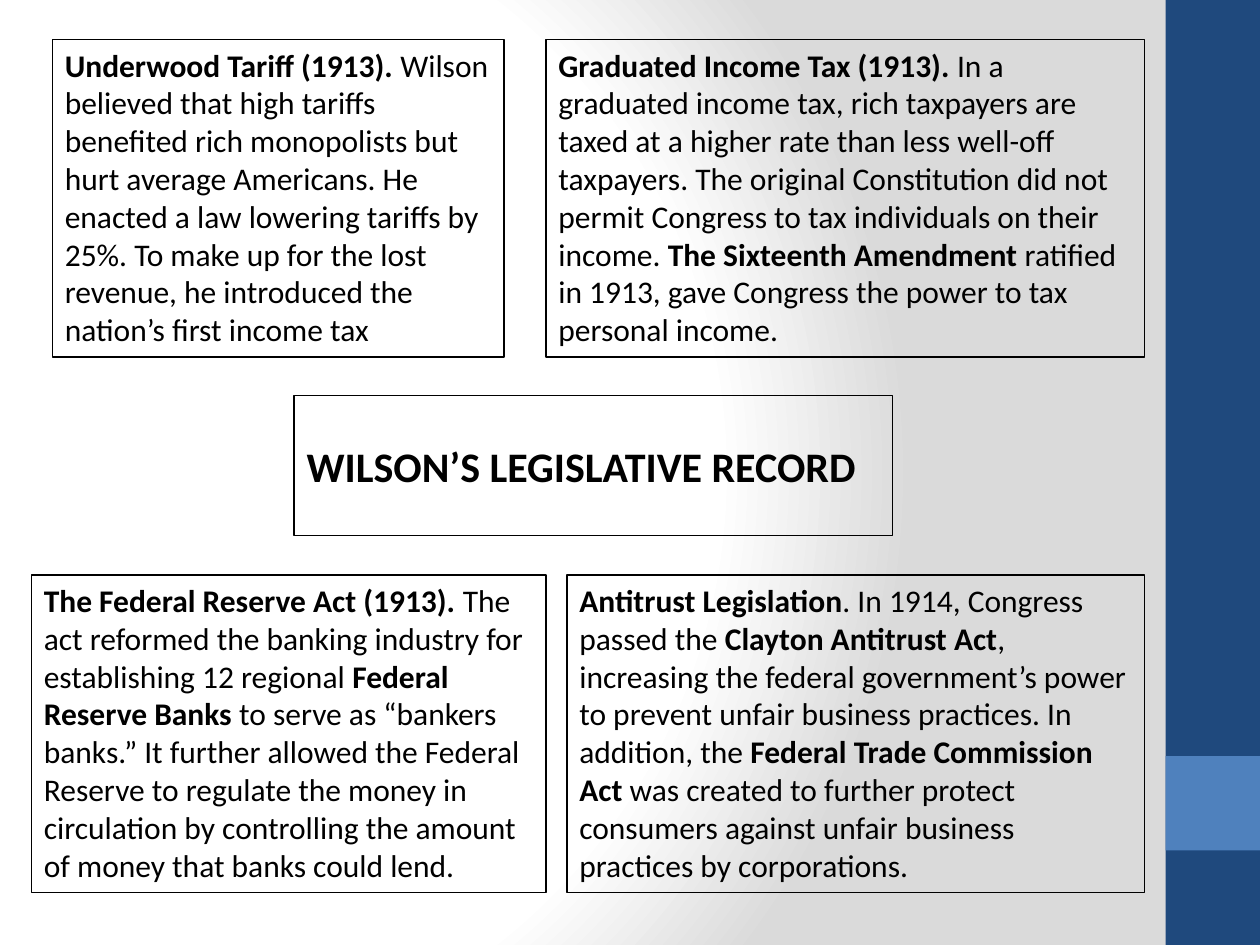
from dataclasses import dataclass

import pptx
import pptx.dml.color
import pptx.enum.shapes
import pptx.enum.text
import pptx.oxml
import pptx.oxml.ns
import pptx.util

Pt = pptx.util.Pt


@dataclass(frozen=True)
class Theme:
    font: str = "Calibri"
    body_size: float = 18
    title_size: float = 24
    outline_width: float = 0.75
    ink: str = "000000"
    band: str = "1F497D"
    accent: str = "4F81BD"
    background_stops: tuple[tuple[int, str], ...] = ((0, "FFFFFF"), (75, "FFFFFF"), (100, "DADADA"))


@dataclass(frozen=True)
class Box:
    left: float
    top: float
    width: float
    height: float


@dataclass(frozen=True)
class Law:
    box: Box
    runs: tuple[str, ...]  # bold and regular text alternate, bold first


THEME = Theme()
SLIDE_WIDTH, SLIDE_HEIGHT = 720, 540
BAND_WIDTH = 54
TOP_ROW, BOTTOM_ROW, LAW_HEIGHT = 22.5, 328.5, 181.5
TITLE = "WILSON’S LEGISLATIVE RECORD"
TITLE_BOX = Box(168, 226, 342, 80)

LAWS = (
    Law(Box(30, TOP_ROW, 258, LAW_HEIGHT), (
        "Underwood Tariff (1913). ",
        "Wilson believed that high tariffs benefited rich monopolists but hurt average "
        "Americans. He enacted a law lowering tariffs by 25%. To make up for the lost "
        "revenue, he introduced the nation’s first income tax",
    )),
    Law(Box(312, TOP_ROW, 342, LAW_HEIGHT), (
        "Graduated Income Tax (1913). ",
        "In a graduated income tax, rich taxpayers are taxed at a higher rate than less "
        "well-off taxpayers. The original Constitution did not permit Congress to tax "
        "individuals on their income. ",
        "The Sixteenth Amendment ",
        "ratified in 1913, gave Congress the power to tax personal income.",
    )),
    Law(Box(18, BOTTOM_ROW, 294, LAW_HEIGHT), (
        "The Federal Reserve Act (1913). ",
        "The act reformed the banking industry for establishing 12 regional ",
        "Federal Reserve Banks",
        " to serve as “bankers banks.” It further allowed the Federal Reserve to regulate "
        "the money in circulation by controlling the amount of money that banks could lend.",
    )),
    Law(Box(324, BOTTOM_ROW, 330, LAW_HEIGHT), (
        "Antitrust Legislation",
        ". In 1914, Congress passed the ",
        "Clayton Antitrust Act",
        ", increasing the federal government’s power to prevent unfair business practices. "
        "In addition, the ",
        "Federal Trade Commission Act",
        " was created to further protect consumers against unfair business practices by "
        "corporations.",
    )),
)


def rgb(color: str) -> pptx.dml.color.RGBColor:
    return pptx.dml.color.RGBColor.from_string(color)


def lengths(box: Box) -> tuple[pptx.util.Length, ...]:
    return Pt(box.left), Pt(box.top), Pt(box.width), Pt(box.height)


def set_background(slide: pptx.slide.Slide) -> None:
    """Lay a circular gradient, which python-pptx has no method for."""
    slide.background.fill.solid()
    solid_fill = slide.element.find(".//" + pptx.oxml.ns.qn("p:bgPr"))[0]
    stops = "".join(
        f'<a:gs pos="{position * 1000}"><a:srgbClr val="{color}"/></a:gs>'
        for position, color in THEME.background_stops
    )
    gradient = pptx.oxml.parse_xml(
        f'<a:gradFill {pptx.oxml.ns.nsdecls("a")} rotWithShape="1"><a:gsLst>{stops}</a:gsLst>'
        '<a:path path="circle"><a:fillToRect l="20000" t="50000" r="100000" b="50000"/></a:path>'
        "</a:gradFill>"
    )
    solid_fill.getparent().replace(solid_fill, gradient)


def add_band(slide: pptx.slide.Slide, box: Box, color: str) -> None:
    shape = slide.shapes.add_shape(pptx.enum.shapes.MSO_SHAPE.RECTANGLE, *lengths(box))
    shape.shadow.inherit = False
    shape.fill.solid()
    shape.fill.fore_color.rgb = rgb(color)
    shape.line.fill.background()


def add_run(paragraph, text: str, size: float, bold: bool) -> None:
    run = paragraph.add_run()
    run.text = text
    run.font.name = THEME.font
    run.font.size = Pt(size)
    run.font.bold = bold
    run.font.color.rgb = rgb(THEME.ink)


def fill_box(shape, runs: tuple[str, ...], size: float) -> None:
    """Outline the shape and write runs that alternate bold and regular."""
    shape.line.color.rgb = rgb(THEME.ink)
    shape.line.width = Pt(THEME.outline_width)
    shape.text_frame.word_wrap = True
    paragraph = shape.text_frame.paragraphs[0]
    paragraph.alignment = pptx.enum.text.PP_ALIGN.LEFT
    for index, text in enumerate(runs):
        add_run(paragraph, text, size, bold=index % 2 == 0)


def add_title(slide: pptx.slide.Slide) -> None:
    title = slide.shapes.title
    title.left, title.top, title.width, title.height = lengths(TITLE_BOX)
    title.text_frame.auto_size = pptx.enum.text.MSO_AUTO_SIZE.NONE
    title.text_frame.vertical_anchor = pptx.enum.text.MSO_ANCHOR.MIDDLE
    fill_box(title, (TITLE,), THEME.title_size)


def add_law(slide: pptx.slide.Slide, law: Law) -> None:
    shape = slide.shapes.add_textbox(*lengths(law.box))
    shape.text_frame.auto_size = pptx.enum.text.MSO_AUTO_SIZE.SHAPE_TO_FIT_TEXT
    fill_box(shape, law.runs, THEME.body_size)


def main() -> None:
    presentation = pptx.Presentation()
    presentation.slide_width, presentation.slide_height = Pt(SLIDE_WIDTH), Pt(SLIDE_HEIGHT)
    title_only = presentation.slide_layouts.get_by_name("Title Only")
    slide = presentation.slides.add_slide(title_only)

    set_background(slide)
    band_left = SLIDE_WIDTH - BAND_WIDTH
    add_band(slide, Box(band_left, 0, BAND_WIDTH, SLIDE_HEIGHT), THEME.band)
    add_band(slide, Box(band_left, 432, BAND_WIDTH, BAND_WIDTH), THEME.accent)
    add_title(slide)
    for law in LAWS:
        add_law(slide, law)

    presentation.save("out.pptx")


if __name__ == "__main__":
    main()
